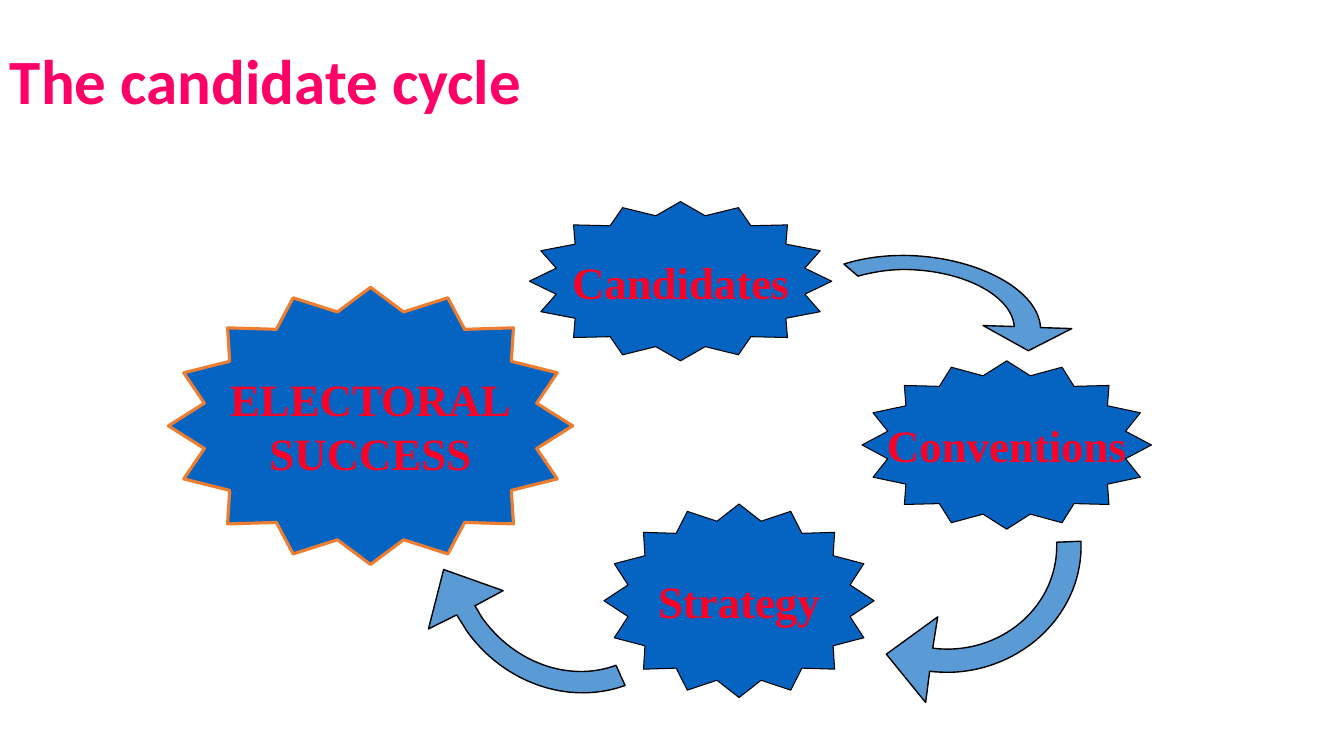
from dataclasses import dataclass
from math import cos, radians, sin

from lxml.etree import SubElement
from pptx import Presentation
from pptx.dml.color import RGBColor
from pptx.enum.shapes import MSO_SHAPE
from pptx.enum.text import MSO_ANCHOR, PP_ALIGN
from pptx.oxml.ns import qn
from pptx.shapes.autoshape import Shape
from pptx.slide import Slide
from pptx.util import Emu, Pt

EMU_PER_PX = 9144
STAR_DEPTH = 0.419

Point = tuple[int, int]


@dataclass(frozen=True)
class Theme:
    title: str = "FF0066"
    star: str = "0563C1"
    star_text: str = "FC0128"
    arrow: str = "5B9BD5"
    outline: str = "000000"
    highlight: str = "ED7D31"
    title_font: str = "Calibri"
    star_font: str = "Times New Roman"
    title_size: float = 45
    star_size: float = 32


THEME = Theme()


@dataclass(frozen=True)
class Star:
    lines: tuple[str, ...]
    left: int
    top: int
    width: int
    height: int
    outline: str = THEME.outline
    outline_width: float = 0.75


@dataclass(frozen=True)
class Arrow:
    left: int
    top: int
    width: int
    height: int
    rotation: float
    start: Point
    segments: tuple[tuple[Point, ...], ...]

    def to_frame(self, point: Point) -> tuple[Emu, Emu]:
        angle = radians(self.rotation)
        across = point[0] - self.left - self.width / 2
        down = point[1] - self.top - self.height / 2
        return (px(across * cos(angle) + down * sin(angle) + self.width / 2),
                px(down * cos(angle) - across * sin(angle) + self.height / 2))


STARS = (
    Star(("Candidates",), 525, 200, 300, 158),
    Star(("Conventions",), 855, 358, 287, 167),
    Star(("Strategy",), 599, 500, 268, 192),
    Star(("ELECTORAL", "SUCCESS"), 167, 285, 401, 275, THEME.highlight, 2.25),
)

ARROWS = (
    Arrow(782, 254, 250, 133, 4.1, (1006, 324), (
        ((1004, 296), (963, 272), (911, 268)),
        ((889, 266), (869, 269), (851, 274)),
        ((837, 262),),
        ((859, 255), (885, 252), (912, 254)),
        ((977, 259), (1030, 290), (1032, 325)),
        ((1063, 326),), ((1020, 348),), ((975, 323),), ((1006, 324),),
    )),
    Arrow(815, 409, 250, 266, 87.9, (925, 643), (
        ((931, 644), (937, 644), (943, 644)),
        ((1003, 642), (1050, 595), (1048, 538)),
        ((1072, 537),),
        ((1075, 606), (1017, 664), (944, 667)),
        ((937, 667), (930, 667), (922, 666)),
        ((918, 697),), ((879, 649),), ((930, 612),), ((925, 643),),
    )),
    Arrow(440, 414, 252, 278, 144.6, (471, 601), (
        ((474, 605), (476, 610), (479, 614)),
        ((511, 658), (565, 677), (611, 660)),
        ((620, 680),),
        ((565, 700), (500, 678), (463, 626)),
        ((460, 621), (456, 615), (453, 610)),
        ((425, 624),), ((440, 565),), ((499, 586),), ((471, 601),),
    )),
)


def px(value: float) -> Emu:
    return Emu(round(value * EMU_PER_PX))


def style_shape(shape: Shape, fill: str, outline: str, width: float) -> None:
    shape.shadow.inherit = False
    shape.fill.solid()
    shape.fill.fore_color.rgb = RGBColor.from_string(fill)
    shape.line.color.rgb = RGBColor.from_string(outline)
    shape.line.width = Pt(width)


def write_lines(shape: Shape, lines: tuple[str, ...], alignment: PP_ALIGN,
                font_name: str, size: float, color: str) -> None:
    frame = shape.text_frame
    frame.vertical_anchor = MSO_ANCHOR.MIDDLE
    for index, text in enumerate(lines):
        paragraph = frame.paragraphs[0] if index == 0 else frame.add_paragraph()
        paragraph.alignment = alignment
        run = paragraph.add_run()
        run.text = text
        run.font.name = font_name
        run.font.size = Pt(size)
        run.font.bold = True
        run.font.color.rgb = RGBColor.from_string(color)


def draw_star(slide: Slide, star: Star) -> None:
    shape = slide.shapes.add_shape(MSO_SHAPE.STAR_16_POINT, px(star.left),
                                   px(star.top), px(star.width), px(star.height))
    shape.adjustments[0] = STAR_DEPTH
    style_shape(shape, THEME.star, star.outline, star.outline_width)
    shape.text_frame.word_wrap = False
    write_lines(shape, star.lines, PP_ALIGN.CENTER, THEME.star_font,
                THEME.star_size, THEME.star_text)


def trace_outline(shape: Shape, arrow: Arrow) -> None:
    outline = shape.element.find(".//" + qn("a:path"))
    for child in list(outline):
        outline.remove(child)
    outline.set("w", str(px(arrow.width)))
    outline.set("h", str(px(arrow.height)))
    steps = [("a:moveTo", (arrow.start,))]
    steps += [("a:lnTo" if len(segment) == 1 else "a:cubicBezTo", segment)
              for segment in arrow.segments]
    for tag, points in steps:
        step = SubElement(outline, qn(tag))
        for point in points:
            x, y = arrow.to_frame(point)
            SubElement(step, qn("a:pt"), x=str(x), y=str(y))
    SubElement(outline, qn("a:close"))


def draw_arrow(slide: Slide, arrow: Arrow) -> None:
    builder = slide.shapes.build_freeform(*arrow.to_frame(arrow.start))
    builder.add_line_segments([arrow.to_frame(segment[-1]) for segment in arrow.segments])
    shape = builder.convert_to_shape()
    shape.left, shape.top = px(arrow.left), px(arrow.top)
    shape.width, shape.height = px(arrow.width), px(arrow.height)
    shape.rotation = arrow.rotation
    trace_outline(shape, arrow)
    style_shape(shape, THEME.arrow, THEME.outline, 1)


def draw_title(slide: Slide, text: str) -> None:
    shape = slide.shapes.add_textbox(px(0), px(1), px(899), px(164))
    shape.text_frame.word_wrap = True
    write_lines(shape, (text,), PP_ALIGN.LEFT, THEME.title_font,
                THEME.title_size, THEME.title)
    shape.text_frame.paragraphs[0].line_spacing = 0.9


def main() -> None:
    presentation = Presentation()
    presentation.slide_width = px(1333)
    presentation.slide_height = px(750)
    slide = presentation.slides.add_slide(presentation.slide_layouts[6])
    for star in STARS:
        draw_star(slide, star)
    for arrow in ARROWS:
        draw_arrow(slide, arrow)
    draw_title(slide, "The candidate cycle")
    presentation.save("out.pptx")


if __name__ == "__main__":
    main()
